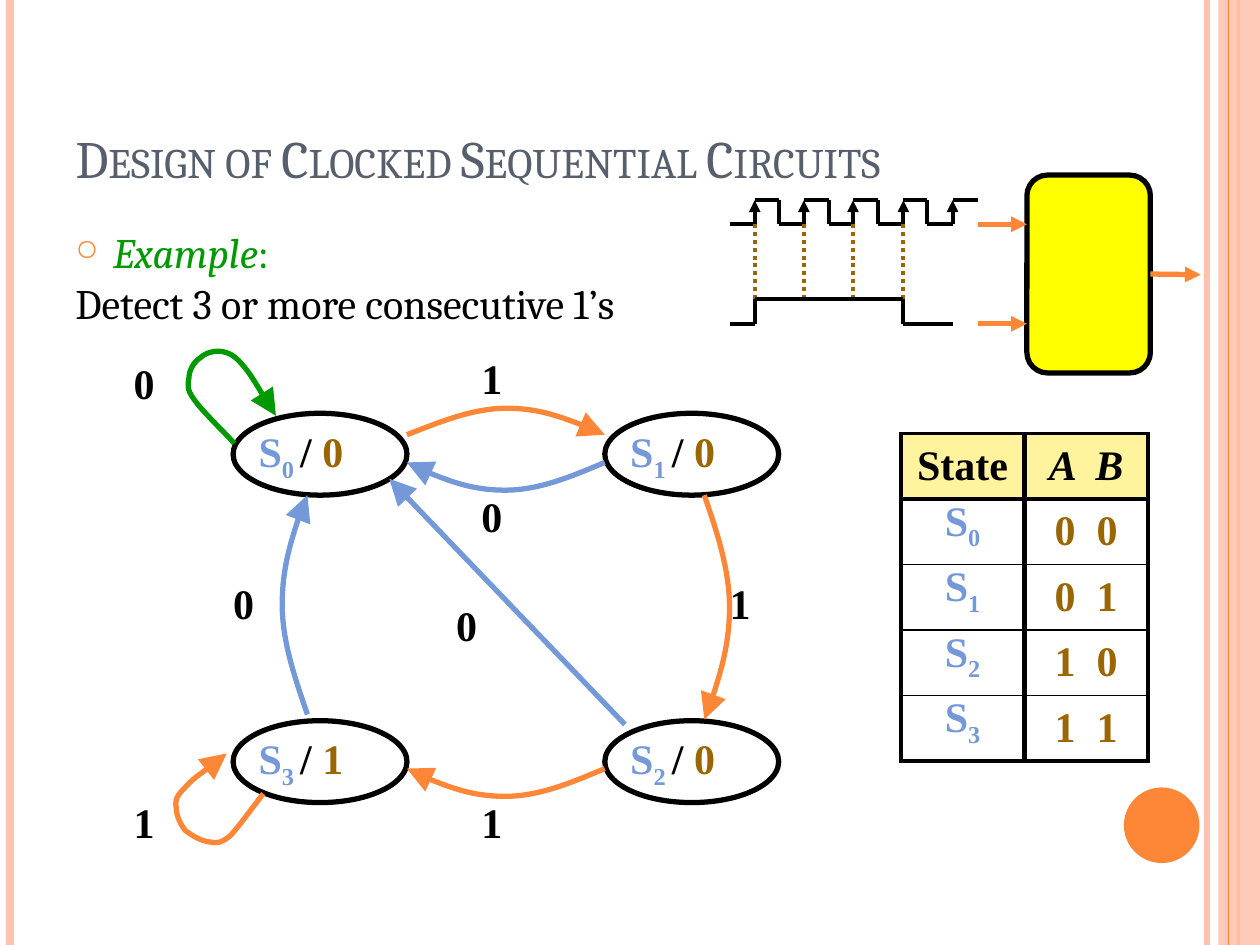
import lxml.etree
import pptx
import pptx.dml.color
import pptx.enum.dml
import pptx.enum.shapes
import pptx.enum.text
import pptx.oxml.ns
import pptx.util

RGB = pptx.dml.color.RGBColor
BLACK = RGB(0x00, 0x00, 0x00)
ORANGE = RGB(0xFE, 0x86, 0x37)
PEACH = RGB(0xFE, 0xC3, 0xAE)
SLATE = RGB(0x57, 0x5F, 0x6D)
YELLOW = RGB(0xFF, 0xFF, 0x00)
CREAM = RGB(0xFF, 0xF3, 0x9D)
BLUE = RGB(0x75, 0x98, 0xD9)
GREEN = RGB(0x00, 0x99, 0x00)
BROWN = RGB(0x99, 0x66, 0x00)

PX = 9144  # EMU per px, 100 px to the inch
SHAPE = pptx.enum.shapes.MSO_SHAPE
ANCHOR = pptx.enum.text.MSO_ANCHOR
ALIGN = pptx.enum.text.PP_ALIGN
qn = pptx.oxml.ns.qn


def child(parent, tag, **attrs):
    return lxml.etree.SubElement(parent, qn(tag), attrs)


class Slide:
    heading, serif, size = "Cambria", "Times New Roman", 24

    def __init__(self, prs):
        self.s = prs.slides.add_slide(prs.slide_layouts[5])

    def run(self, p, text, color, font=None, size=None, bold=True, italic=False, base=0):
        r = p.add_run()
        r.text = text
        f = r.font
        f.name, f.size = font or self.serif, pptx.util.Pt(size or self.size)
        f.bold, f.italic, f.color.rgb = bold, italic, color
        if base:
            r._r.get_or_add_rPr().set("baseline", str(base * 1000))
        return r

    def frame(self, tf, anchor=ANCHOR.TOP, inset=(0, 0)):
        tf.word_wrap, tf.vertical_anchor = True, anchor
        tf.margin_left = tf.margin_right = inset[0] * PX
        tf.margin_top = tf.margin_bottom = inset[1] * PX
        return tf

    def title(self, text, x, y, w, h):
        sp = self.s.shapes.title
        sp.left, sp.top, sp.width, sp.height = (v * PX for v in (x, y, w, h))
        tf = self.frame(sp.text_frame, ANCHOR.BOTTOM, (10, 5))
        tf.auto_size = pptx.enum.text.MSO_AUTO_SIZE.NONE
        p = tf.paragraphs[0]
        p.alignment = ALIGN.LEFT
        r = self.run(p, text, SLATE, self.heading, 30, bold=False)
        r._r.get_or_add_rPr().set("cap", "small")

    def textbox(self, x, y, w, h, inset=(0, 0)):
        sp = self.s.shapes.add_textbox(x * PX, y * PX, w * PX, h * PX)
        return self.frame(sp.text_frame, inset=inset)

    def label(self, text, x, y):
        self.run(self.textbox(x, y, 39, 36).paragraphs[0], text, BLACK)

    def shape(self, kind, x, y, w, h, fill=None, line=None, width=3, alpha=None):
        sp = self.s.shapes.add_shape(kind, x * PX, y * PX, w * PX, h * PX)
        sp.shadow.inherit = False
        self.fill(sp.fill, fill)
        if line is None:
            sp.line.fill.background()
        else:
            sp.line.color.rgb, sp.line.width = line, pptx.util.Pt(width)
        if alpha:
            child(sp._element.spPr.find(".//" + qn("a:srgbClr")), "a:alpha", val=str(alpha * 1000))
        return sp

    def fill(self, fill, color):
        if color is None:
            fill.background()
        else:
            fill.solid()
            fill.fore_color.rgb = color

    def stroke(self, line, color, width, head=None):
        line.color.rgb, line.width = color, pptx.util.Pt(width)
        if head:
            child(line._get_or_add_ln(), "a:tailEnd", type="triangle", w=head, len=head)

    def line(self, x1, y1, x2, y2, color=BLACK, width=2.25, head=None, dash=None, start=None):
        c = self.s.shapes.add_connector(pptx.enum.shapes.MSO_CONNECTOR.STRAIGHT,
                                        x1 * PX, y1 * PX, x2 * PX, y2 * PX)
        if dash:
            c.line.dash_style = dash
        self.stroke(c.line, color, width, head)
        child(c._element.spPr, "a:effectLst")
        if start:
            c.begin_connect(*start)
        return c

    def curve(self, color, points):
        """Bezier arrow: a start point, then three points for each segment."""
        fb = self.s.shapes.build_freeform(*points[0], scale=PX)
        fb.add_line_segments(points[1:], close=False)
        sp = fb.convert_to_shape()
        sp.shadow.inherit = False
        sp.fill.background()
        self.stroke(sp.line, color, 3, "lg")
        outline = sp._element.spPr.find(".//" + qn("a:path"))
        steps = outline.findall(qn("a:lnTo"))
        for i in range(0, len(steps), 3):
            cubic = child(outline, "a:cubicBezTo")
            for step in steps[i:i + 3]:
                cubic.append(step[0])
                outline.remove(step)

    def state(self, number, output, x, y):
        sp = self.shape(SHAPE.OVAL, x, y, 138, 65, line=BLACK)
        p = self.frame(sp.text_frame, ANCHOR.MIDDLE).paragraphs[0]
        p.alignment = ALIGN.LEFT
        self.run(p, "S", BLUE)
        self.run(p, number + " ", BLUE, base=-25)
        self.run(p, "/ ", BLACK)
        self.run(p, output, BROWN)

    def cell(self, cell, parts, borders, fill=None, anchor=ANCHOR.MIDDLE):
        cell.margin_left = cell.margin_right = cell.margin_top = cell.margin_bottom = 0
        cell.vertical_anchor = anchor
        p = cell.text_frame.paragraphs[0]
        p.alignment = ALIGN.CENTER
        for text, color, opts in parts:
            self.run(p, text, color, **opts)
        tc = cell._tc.get_or_add_tcPr()
        for side, width in zip("LRTB", borders):
            ln = child(tc, "a:ln" + side, w=str(pptx.util.Pt(width)))
            child(child(ln, "a:solidFill"), "a:srgbClr", val=str(BLACK))
        self.fill(cell.fill, fill)

    def state_table(self, x, y, codes):
        rows = len(codes) + 1
        t = self.s.shapes.add_table(rows, 2, x * PX, y * PX, 196 * PX, rows * 52 * PX).table
        t.first_row = t.horz_banding = False
        for col in t.columns:
            col.width = 98 * PX
        for row in t.rows:
            row.height = 52 * PX
        across, down = [2.25, 3, 2.25], [2.25, 3] + [1] * (rows - 2) + [2.25]
        content = [([("State", BLACK, {})], [("A  B", BLACK, {"italic": True})])]
        content += [([("S", BLUE, {}), (str(i), BLUE, {"base": -25})], [(code, BROWN, {})])
                    for i, code in enumerate(codes)]
        for i, row in enumerate(content):
            for j, parts in enumerate(row):
                self.cell(t.cell(i, j), parts, across[j:j + 2] + down[i:i + 2],
                          CREAM if i == 0 else None,
                          ANCHOR.TOP if i and j == 0 else ANCHOR.MIDDLE)


def main():
    prs = pptx.Presentation()
    prs.slide_width, prs.slide_height = 1000 * PX, 750 * PX
    s = Slide(prs)

    # Side decoration
    for x, color, width in ((958, PEACH, 3), (8, PEACH, 4.5), (983, ORANGE, 1.5)):
        s.line(x, 0, x, 750, color, width)
    s.shape(SHAPE.RECTANGLE, 967, 0, 33, 750, PEACH, alpha=87)
    s.line(975, 0, 975, 750, ORANGE, 0.75)
    s.shape(SHAPE.OVAL, 892, 625, 60, 60, ORANGE)

    # Title and text
    s.title("Design of Clocked Sequential Circuits", 50, 30, 842, 125)
    tf = s.textbox(50, 175, 842, 533, (10, 5))
    p = tf.paragraphs[0]
    s.run(p, "Example", GREEN, s.heading, bold=False, italic=True)
    s.run(p, ":", GREEN, s.heading, bold=False)
    pPr = p._p.get_or_add_pPr()
    pPr.set("marL", str(30 * PX))
    pPr.set("indent", str(-30 * PX))
    child(child(pPr, "a:buClr"), "a:srgbClr", val=str(ORANGE))
    child(pPr, "a:buSzPct", val="70000")
    child(pPr, "a:buChar", char="○")
    s.run(tf.add_paragraph(), "Detect 3 or more consecutive 1’s", BLACK, s.heading, bold=False)

    # Circuit block
    block = s.shape(SHAPE.ROUNDED_RECTANGLE, 815, 139, 98, 157, YELLOW, BLACK)
    s.line(913, 218, 953, 218, ORANGE, 3, "med", start=(block, 3))
    for y in (178, 257):
        s.line(776, y, 815, y, ORANGE, 3, "med")

    # Clock and input waveforms
    edges = [round(579 + 19.65 * i) for i in range(11)]
    for i in range(0, 10, 2):
        left, rise, fall = edges[i:i + 3]
        s.line(left, 178, rise, 178)
        s.line(rise, 178, rise, 159, head="med")
        s.line(rise, 159, fall, 159)
        if i < 8:
            s.line(fall, 159, fall, 178)
            s.line(rise, 178, rise, 237, BROWN, dash=pptx.enum.dml.MSO_LINE.ROUND_DOT)
    levels = [(edges[0], 257), (edges[1], 257), (edges[1], 237),
              (edges[7], 237), (edges[7], 257), (edges[9], 257)]
    for a, b in zip(levels, levels[1:]):
        s.line(*a, *b)

    # States
    for number, output, x, y in (("0", "0", 185, 328), ("1", "0", 480, 328),
                                 ("3", "1", 185, 572), ("2", "0", 480, 572)):
        s.state(number, output, x, y)

    # Transitions
    s.curve(GREEN, [(186, 352), (181, 346), (160, 326), (154, 317), (148, 309), (149, 305),
                    (150, 300), (150, 294), (154, 287), (159, 284), (163, 280), (171, 278),
                    (176, 279), (181, 280), (185, 281), (192, 289), (199, 297), (213, 321),
                    (219, 330)])
    s.curve(ORANGE, [(209, 630), (204, 636), (189, 657), (182, 664), (174, 670), (171, 669),
                     (165, 668), (159, 667), (152, 663), (147, 659), (143, 654), (140, 647),
                     (140, 642), (139, 636), (139, 633), (146, 626), (153, 618), (173, 604),
                     (180, 598)])
    s.curve(BLUE, [(244, 567), (234, 538), (224, 509), (224, 480), (224, 451), (237, 407), (244, 393)])
    s.curve(ORANGE, [(559, 393), (569, 422), (579, 452), (579, 482), (579, 511), (566, 556), (559, 571)])
    for color, y in ((ORANGE, 610), (BLUE, 367)):
        s.curve(color, [(480, y), (454, y + 11), (428, y + 22), (401, y + 22),
                        (375, y + 22), (336, y + 8), (323, y)])
    s.curve(ORANGE, [(323, 345), (349, 335), (375, 324), (402, 324), (428, 324), (467, 338), (480, 345)])
    s.line(496, 575, 309, 380, BLUE, 3, "lg")
    for text, x, y in (("0", 106, 284), ("1", 579, 458), ("1", 382, 632), ("0", 185, 458),
                       ("0", 362, 476), ("1", 106, 632), ("0", 382, 389), ("1", 382, 280)):
        s.label(text, x, y)

    # State assignment
    s.state_table(715, 344, ["0  0", "0  1", "1  0", "1  1"])

    prs.save("out.pptx")


if __name__ == "__main__":
    main()
